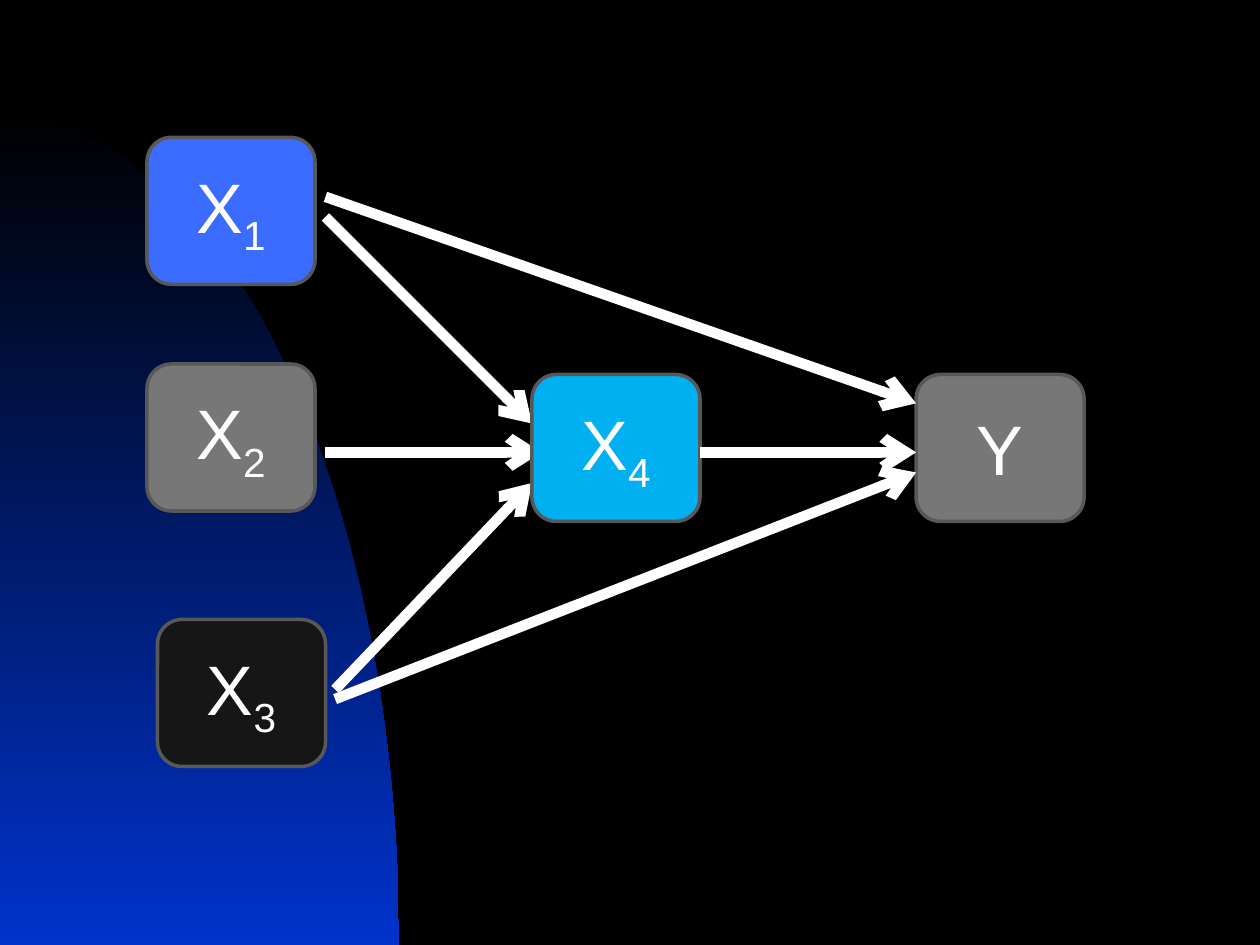
import math
from dataclasses import dataclass

from lxml import etree
from pptx import Presentation
from pptx.dml.color import RGBColor
from pptx.enum import shapes, text
from pptx.oxml.ns import qn
from pptx.util import Pt


@dataclass(frozen=True)
class Theme:
    font: str = "Arial"
    label_size: int = 40
    outline_width: int = 2
    arrow_width: int = 6
    background: str = "000000"
    glow: str = "0033CC"
    light: str = "FFFFFF"
    outline: str = "585858"
    blue: str = "3C6BFF"
    cyan: str = "00B0F0"
    gray: str = "777777"
    dark: str = "161616"


def color(value):
    return RGBColor.from_string(value)


class DiagramSlide:
    BOX_WIDTH, BOX_HEIGHT = 96, 84

    def __init__(self, slide, theme):
        self.slide = slide
        self.theme = theme

    def background(self):
        fill = self.slide.background.fill
        fill.solid()
        fill.fore_color.rgb = color(self.theme.background)

    def quarter_ellipse(self, top, width, bottom, steps=60):
        """Fill the lower left corner with a gradient quarter ellipse."""
        angles = [math.pi / 2 * step / steps for step in range(steps + 1)]
        points = [
            (Pt(width * math.sin(angle)), Pt(bottom - (bottom - top) * math.cos(angle)))
            for angle in angles
        ]
        builder = self.slide.shapes.build_freeform(*points[0])
        builder.add_line_segments(points[1:] + [(0, Pt(bottom))], close=True)
        shape = builder.convert_to_shape()
        shape.shadow.inherit = False
        shape.line.fill.background()
        shape.fill.gradient()
        shape.fill.gradient_angle = 270
        stops = zip(shape.fill.gradient_stops, (self.theme.background, self.theme.glow), (0, 1))
        for stop, value, position in stops:
            stop.color.rgb = color(value)
            stop.position = position

    def box(self, left, top, fill, letter, subscript=""):
        shape = self.slide.shapes.add_shape(
            shapes.MSO_SHAPE.ROUNDED_RECTANGLE,
            Pt(left), Pt(top), Pt(self.BOX_WIDTH), Pt(self.BOX_HEIGHT),
        )
        shape.shadow.inherit = False
        shape.fill.solid()
        shape.fill.fore_color.rgb = color(fill)
        shape.line.color.rgb = color(self.theme.outline)
        shape.line.width = Pt(self.theme.outline_width)
        frame = shape.text_frame
        frame.vertical_anchor = text.MSO_ANCHOR.MIDDLE
        paragraph = frame.paragraphs[0]
        paragraph.alignment = text.PP_ALIGN.CENTER
        paragraph.font.name = self.theme.font
        paragraph.font.size = Pt(self.theme.label_size)
        paragraph.font.color.rgb = color(self.theme.light)
        paragraph.add_run().text = letter
        if subscript:
            run = paragraph.add_run()
            run.text = subscript
            run._r.get_or_add_rPr().set("baseline", "-25000")

    def arrow(self, start, end):
        connector = self.slide.shapes.add_connector(
            shapes.MSO_CONNECTOR.STRAIGHT, *map(Pt, start + end)
        )
        connector.line.color.rgb = color(self.theme.light)
        connector.line.width = Pt(self.theme.arrow_width)
        etree.SubElement(connector.line._get_or_add_ln(), qn("a:tailEnd"), type="arrow")
        etree.SubElement(connector._element.spPr, qn("a:effectLst"))


def main():
    presentation = Presentation()
    presentation.slide_width, presentation.slide_height = Pt(720), Pt(540)
    theme = Theme()
    diagram = DiagramSlide(
        presentation.slides.add_slide(presentation.slide_layouts[6]), theme
    )

    input_left, shifted_left = 84, 90
    middle_left, output_left, result_top = 304, 523.5, 214
    start_x, shifted_start_x = 186, 191.5
    axis_y = 258.5

    diagram.background()
    diagram.quarter_ellipse(top=66, width=228, bottom=540)
    diagram.box(input_left, 78.5, theme.blue, "X", "1")
    diagram.box(input_left, 208, theme.gray, "X", "2")
    diagram.box(shifted_left, 354, theme.dark, "X", "3")

    diagram.arrow((start_x, 124), (middle_left, 242))
    diagram.arrow((shifted_start_x, 394), (middle_left, 276))
    # This arrowhead runs slightly under the X4 box, which is drawn next.
    diagram.arrow((start_x, axis_y), (middle_left + 5.5, axis_y))

    diagram.box(output_left, result_top, theme.gray, "Y")
    diagram.box(middle_left, result_top, theme.cyan, "X", "4")

    diagram.arrow((start_x, 112.5), (output_left, 230.5))
    diagram.arrow((shifted_start_x, 399.5), (output_left, 270))
    diagram.arrow((middle_left + diagram.BOX_WIDTH, axis_y), (output_left, axis_y))

    presentation.save("out.pptx")


if __name__ == "__main__":
    main()
